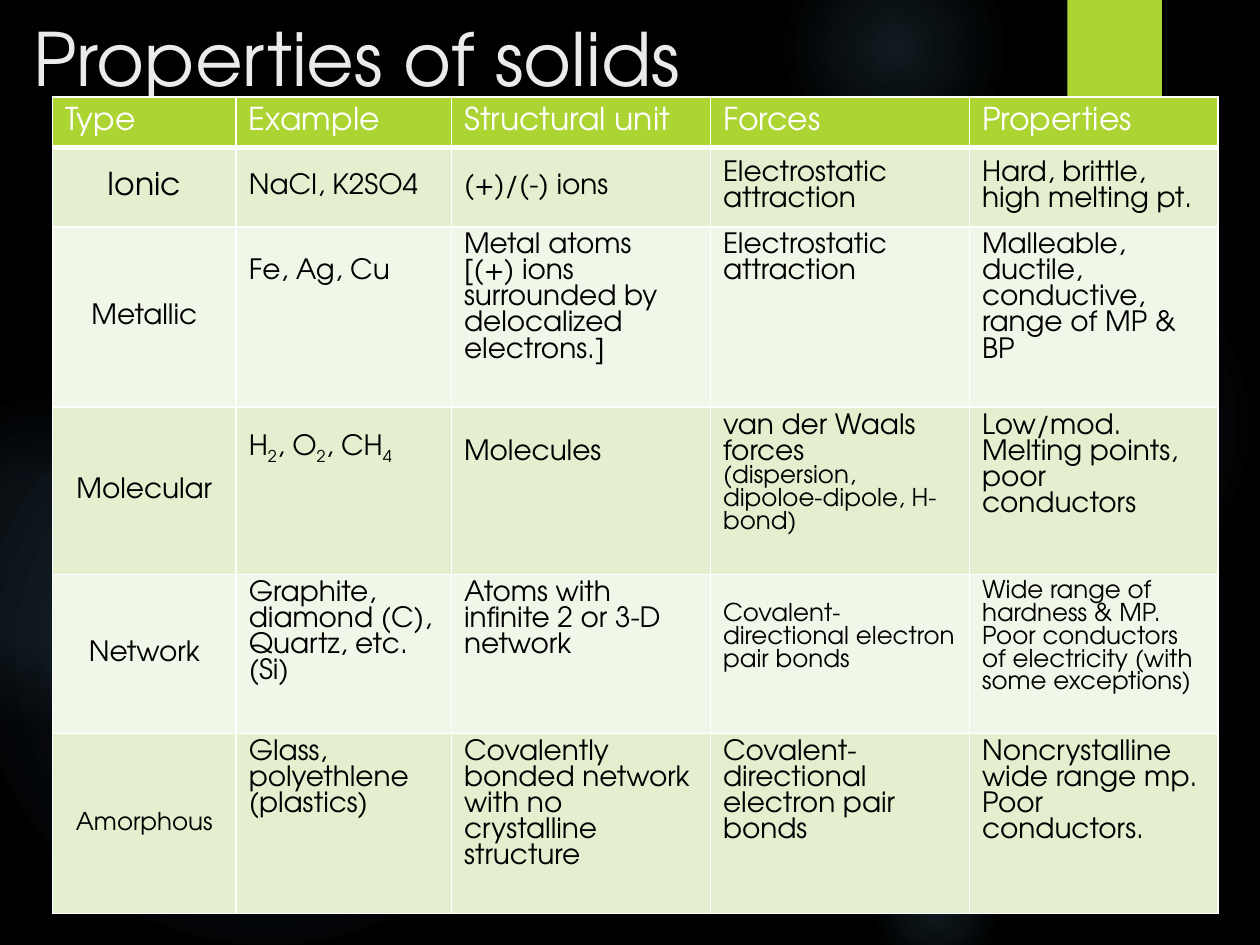
from dataclasses import dataclass

from lxml import etree
from pptx import Presentation
from pptx.dml.color import RGBColor
from pptx.enum.shapes import MSO_SHAPE
from pptx.enum.text import MSO_ANCHOR, PP_ALIGN
from pptx.oxml import parse_xml
from pptx.oxml.ns import nsdecls, qn
from pptx.util import Pt

OVAL, RECT = MSO_SHAPE.OVAL, MSO_SHAPE.RECTANGLE
TOP, MIDDLE = MSO_ANCHOR.TOP, MSO_ANCHOR.MIDDLE
LEFT, CENTER = PP_ALIGN.LEFT, PP_ALIGN.CENTER


@dataclass(frozen=True)
class Theme:
    """Colours and type sizes of the slide."""
    font: str = "TeX Gyre Adventor"
    back: str = "000000"
    glow: str = "7AC4F0"
    accent: str = "ACD433"
    title: str = "EBEBEB"
    light: str = "FFFFFF"
    dark: str = "000000"
    bands: tuple = ("E3EFCE", "F1F7E8")
    title_size: int = 42
    head_size: int = 18
    body_size: int = 16
    small_size: int = 14
    leading: float = 0.93


THEME = Theme()
GLOWS = [
    (496, 132, 222, ((0, 7), (36, 6), (69, 0))),
    (448, -36, 126, ((0, 14), (36, 7), (73, 0))),
    (496, 480, 78, ((0, 14), (36, 7), (66, 0))),
    (-12, 210, 330, ((0, 11), (36, 10), (75, 0))),
    (-66, 228, 186, ((0, 8), (36, 8), (72, 0))),
]
COLUMNS = [105, 123, 148, 148, 142]
ROWS = [28.8, 45.5, 103, 95.5, 91, 103]
TABLE = [
    ["Type", "Example", "Structural unit", "Forces", "Properties"],
    ["Ionic", "NaCl, K2SO4", "(+)/(-) ions", "Electrostatic attraction",
     "Hard, brittle, high melting pt."],
    ["Metallic", "Fe, Ag, Cu",
     "Metal atoms\n[(+) ions surrounded by delocalized electrons.]",
     "Electrostatic attraction",
     "Malleable, ductile, conductive, range of MP & BP"],
    ["Molecular", "H_2, O_2, CH_4", "Molecules",
     "van der Waals forces\n(dispersion, dipoloe-dipole, H-bond)",
     "Low/mod. Melting points, poor conductors"],
    ["Network", "Graphite, diamond (C), Quartz, etc. (Si)",
     "Atoms with infinite 2 or 3-D network",
     "Covalent-directional electron pair bonds",
     "Wide range of hardness & MP. Poor conductors of electricity "
     "(with some exceptions)"],
    ["Amorphous", "Glass, polyethlene\n(plastics)",
     "Covalently bonded network with no crystalline structure",
     "Covalent-directional electron pair bonds",
     "Noncrystalline wide range mp. Poor conductors."],
]
SIZES = {
    (1, 0): [THEME.head_size],
    (3, 3): [THEME.body_size, THEME.small_size],
    (4, 3): [THEME.small_size],
    (4, 4): [THEME.small_size],
    (5, 0): [THEME.small_size],
}
LOWERED = {(2, 1), (3, 1), (3, 2), (4, 3)}


def rgb(value):
    """Turn a hex string into a colour."""
    return RGBColor.from_string(value)


def format_run(r, size, color):
    """Apply the theme font to a run."""
    r.font.name, r.font.size, r.font.bold = THEME.font, Pt(size), False
    r.font.color.rgb = rgb(color)


def add_shape(s, kind, x, y, w, h):
    """Add a preset shape without outline or shadow."""
    sp = s.shapes.add_shape(kind, Pt(x), Pt(y), Pt(w), Pt(h))
    sp.shadow.inherit = False
    sp.line.fill.background()
    return sp


def add_glow(s, x, y, size, stops):
    """Add a round glow that fades outwards."""
    sp = add_shape(s, OVAL, x, y, size, size)
    marks = "".join(
        f'<a:gs pos="{pos * 1000}"><a:srgbClr val="{THEME.glow}">'
        f'<a:alpha val="{alpha * 1000}"/></a:srgbClr></a:gs>'
        for pos, alpha in stops)
    fill = parse_xml(
        f'<a:gradFill {nsdecls("a")}><a:gsLst>{marks}</a:gsLst>'
        '<a:path path="circle"><a:fillToRect l="50000" t="50000" '
        'r="50000" b="50000"/></a:path></a:gradFill>')
    sp.element.spPr.find(qn("a:prstGeom")).addnext(fill)


def add_title(s, text):
    """Add the slide title."""
    tf = s.shapes.add_textbox(Pt(12), Pt(0), Pt(556), Pt(110)).text_frame
    tf.word_wrap = True
    tf.text = text
    p = tf.paragraphs[0]
    p.line_spacing = Pt(54)
    format_run(p.runs[0], THEME.title_size, THEME.title)


def write_formula(p, text, size, color):
    """Write text in which an underscore lowers the next character."""
    first, *rest = text.split("_")
    p.text = first
    for part in rest:
        sub = p.add_run()
        sub.text = part[0]
        sub.font._element.set("baseline", "-25000")
        if part[1:]:
            p.add_run().text = part[1:]
    for r in p.runs:
        format_run(r, size, color)


def set_borders(cell, bottom):
    """Draw the cell borders with the given bottom width."""
    tcPr = cell._tc.get_or_add_tcPr()
    for i, side in enumerate("LRTB"):
        ln = etree.Element(qn(f"a:ln{side}"))
        ln.set("w", str(Pt(bottom if side == "B" else 1)))
        fill = etree.SubElement(ln, qn("a:solidFill"))
        etree.SubElement(fill, qn("a:srgbClr")).set("val", THEME.light)
        tcPr.insert(i, ln)


def fill_cell(cell, row, col, text):
    """Write and format one table cell."""
    head = row == 0
    color = THEME.light if head else THEME.dark
    leading = 1.05 if head else THEME.leading
    base = THEME.head_size if head else THEME.body_size
    lines = text.split("\n")
    sizes = SIZES.get((row, col), [base] * len(lines))
    cell.fill.solid()
    cell.fill.fore_color.rgb = rgb(
        THEME.accent if head else THEME.bands[(row - 1) % 2])
    centered = col == 0 and not head
    cell.vertical_anchor = MIDDLE if centered or row == 1 else TOP
    if (row, col) in LOWERED:
        cell.margin_top = Pt(3.6 + sizes[0] * leading)
    tf = cell.text_frame
    tf.text = text
    for p, line, size in zip(tf.paragraphs, lines, sizes):
        p.alignment = CENTER if centered else LEFT
        p.line_spacing = Pt(size * leading)
        write_formula(p, line, size, color)
    set_borders(cell, 3 if head else 1)


def add_properties_table(s):
    """Add the table of solid types."""
    table = s.shapes.add_table(
        len(ROWS), len(COLUMNS), Pt(30), Pt(55.4),
        Pt(sum(COLUMNS)), Pt(sum(ROWS))).table
    for column, width in zip(table.columns, COLUMNS):
        column.width = Pt(width)
    for i, (row, height) in enumerate(zip(table.rows, ROWS)):
        row.height = Pt(height)
        for j, text in enumerate(TABLE[i]):
            fill_cell(table.cell(i, j), i, j, text)


def main():
    """Build the slide and save it."""
    prs = Presentation()
    prs.slide_width, prs.slide_height = Pt(720), Pt(540)
    s = prs.slides.add_slide(prs.slide_layouts[6])
    s.background.fill.solid()
    s.background.fill.fore_color.rgb = rgb(THEME.back)
    for glow in GLOWS:
        add_glow(s, *glow)
    tab = add_shape(s, RECT, 610, 0, 54, 86)
    tab.fill.solid()
    tab.fill.fore_color.rgb = rgb(THEME.accent)
    add_title(s, "Properties of solids")
    add_properties_table(s)
    prs.save("out.pptx")


if __name__ == "__main__":
    main()
